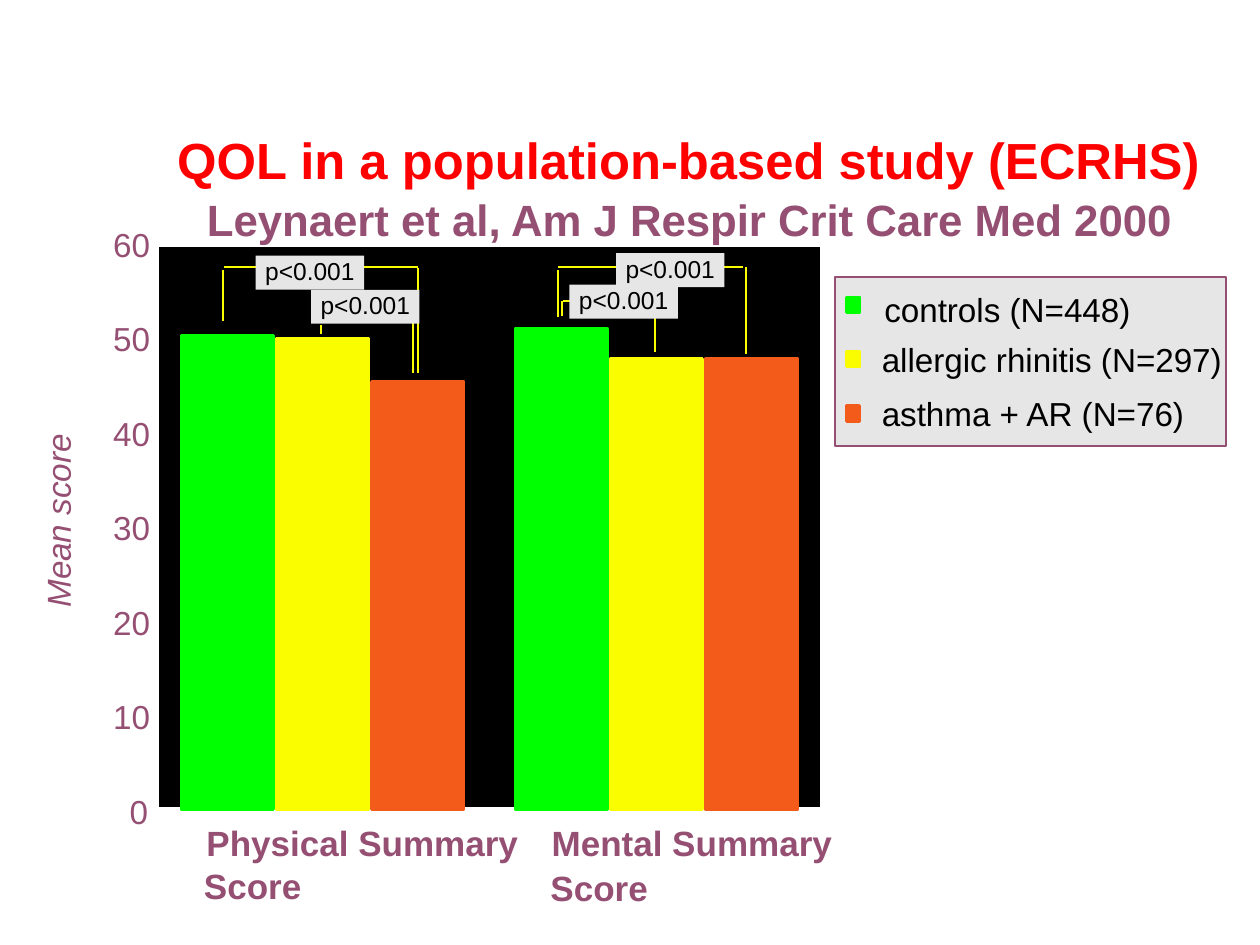
from lxml import etree
from pptx import Presentation
from pptx.dml.color import RGBColor
from pptx.enum.shapes import MSO_CONNECTOR, MSO_SHAPE
from pptx.enum.text import MSO_ANCHOR, MSO_AUTO_SIZE, PP_ALIGN
from pptx.oxml.ns import qn
from pptx.util import Inches, Pt

COLORS = {"black": "000000", "white": "FFFFFF", "gray": "E7E6E6", "plum": "954F72",
          "red": "FF0000", "green": "00FF00", "yellow": "FAFD00", "orange": "F35B1B"}
FONT = "Arial"

# Content
TITLES = [("QOL in a population-based study (ECRHS)", 29, "red"),
          ("Leynaert et al, Am J Respir Crit Care Med 2000", 25, "plum")]
# Legend label, label left, label top, colour, mean scores (physical, mental)
SERIES = [("controls (N=448)", 6.92, 2.25, "green", (50.5, 51.2)),
          ("allergic rhinitis (N=297)", 6.9, 2.64, "yellow", (50.1, 48)),
          ("asthma + AR (N=76)", 6.9, 3.07, "orange", (45.6, 48))]
LEGEND_WIDTHS = (2.18, 2.94, 2.63)
# Category words: text, left, top, width
CATEGORIES = [("Physical Summary", 1.54, 6.47, 2.69), ("Score", 1.52, 6.81, 0.98),
              ("Mental Summary", 4.28, 6.47, 2.44), ("Score", 4.27, 6.83, 0.98)]
# Bracket lines (x1, y1, x2, y2) and the p-value boxes on them (left, top)
P_VALUE = "p<0.001"
BRACKETS = [
    ([(1.77, 2.55, 1.77, 2.14), (1.78, 2.12, 3.32, 2.12), (3.32, 2.13, 3.32, 2.96),
      (3.28, 2.41, 3.28, 2.96), (2.55, 2.65, 2.55, 2.58)],
     [(2.03, 2.03), (2.47, 2.3)]),
    ([(4.43, 2.12, 5.9, 2.12), (5.92, 2.81, 5.92, 2.12), (4.43, 2.52, 4.43, 2.14),
      (4.46, 2.51, 4.46, 2.39), (4.47, 2.39, 5.19, 2.39), (5.2, 2.31, 5.2, 2.79)],
     [(4.89, 2.01), (4.52, 2.26)]),
]

# Chart geometry
ZERO_Y, UNIT = 6.45, 0.075
BAR_LEFT, BAR_STEP, BAR_W, BAR_BOTTOM = 1.44, 0.755, 0.73, 6.42
GROUP_STEP = 2.65
TICK_STEP, TICK_MAX = 10, 60

prs = Presentation()
prs.slide_width, prs.slide_height = Inches(10), Inches(7.5)
slide = prs.slides.add_slide(prs.slide_layouts[6])


def rgb(name):
    return RGBColor.from_string(COLORS[name])


def add_rect(x, y, w, h, fill, line=None, weight=2):
    s = slide.shapes.add_shape(MSO_SHAPE.RECTANGLE, *map(Inches, (x, y, w, h)))
    s.shadow.inherit = False
    s.fill.solid()
    s.fill.fore_color.rgb = rgb(fill)
    if line:
        s.line.color.rgb = rgb(line)
        s.line.width = Pt(weight)
    else:
        s.line.fill.background()
    return s


def add_line(x1, y1, x2, y2, color):
    c = slide.shapes.add_connector(MSO_CONNECTOR.STRAIGHT, *map(Inches, (x1, y1, x2, y2)))
    c.line.color.rgb = rgb(color)
    c.line.width = Pt(1)
    etree.SubElement(c._element.spPr, qn("a:effectLst"))


def set_frame(tf, side, top, bottom, wrap=False):
    tf.word_wrap = wrap
    tf.auto_size = MSO_AUTO_SIZE.SHAPE_TO_FIT_TEXT
    tf.margin_left = tf.margin_right = Inches(side)
    tf.margin_top, tf.margin_bottom = Inches(top), Inches(bottom)
    tf.vertical_anchor = MSO_ANCHOR.TOP


def add_run(p, text, size, color, bold=False, italic=False):
    r = p.add_run()
    r.text = text
    r.font.name, r.font.size = FONT, Pt(size)
    r.font.bold, r.font.italic = bold, italic
    r.font.color.rgb = rgb(color)


def add_label(text, x, y, w, h=0.42, size=19, color="plum", **style):
    s = slide.shapes.add_textbox(*map(Inches, (x, y, w, h)))
    set_frame(s.text_frame, 0.1, 0.05, 0.05)
    add_run(s.text_frame.paragraphs[0], text, size, color, **style)
    return s


# Plot area and legend panel
add_rect(1.25, 1.95, 5.27, 4.47, "black", "white")
add_rect(6.63, 2.2, 3.1, 1.34, "gray", "plum", 1)

# Title and citation
tf = slide.shapes.add_textbox(*map(Inches, (1.25, 0.98, 8.44, 0.96))).text_frame
set_frame(tf, 0.07, 0.1, 0.03, wrap=True)
for i, (text, size, color) in enumerate(TITLES):
    p = tf.add_paragraph() if i else tf.paragraphs[0]
    p.alignment = PP_ALIGN.CENTER
    p.line_spacing = 0.9
    if i:
        p.space_before = Pt(4.5)
    add_run(p, text, size, color, bold=True)

# Significance brackets
for lines, boxes in BRACKETS:
    for ends in lines:
        add_line(*ends, "yellow")
    for x, y in boxes:
        s = add_rect(x, y, 0.86, 0.27, "gray")
        set_frame(s.text_frame, 0.07, 0.03, 0.03)
        p = s.text_frame.paragraphs[0]
        p.alignment = PP_ALIGN.CENTER
        p.line_spacing = 0.9
        add_run(p, P_VALUE, 14, "black")

# Bars
for group in range(2):
    for i, (_, _, _, color, scores) in enumerate(SERIES):
        top = ZERO_Y - scores[group] * UNIT
        add_rect(BAR_LEFT + group * GROUP_STEP + i * BAR_STEP, top,
                 BAR_W, BAR_BOTTOM - top, color, color)

# Value axis
for value in range(0, TICK_MAX + 1, TICK_STEP):
    x, w = (0.8, 0.5) if value else (0.93, 0.35)
    add_label(str(value), x, ZERO_Y - 0.22 - value * UNIT, w)
add_label("Mean score", -0.34, 3.91, 1.6, italic=True).rotation = 270

# Category axis
for text, x, y, w in CATEGORIES:
    add_label(text, x, y, w, 0.43, 20, bold=True)

# Legend entries
for i, ((text, x, y, color, _), w) in enumerate(zip(SERIES, LEGEND_WIDTHS)):
    add_rect(6.72, 2.36 + i * 0.43, 0.1, 0.12, color, color)
    add_label(text, x, y, w, color="black")

prs.save("out.pptx")
